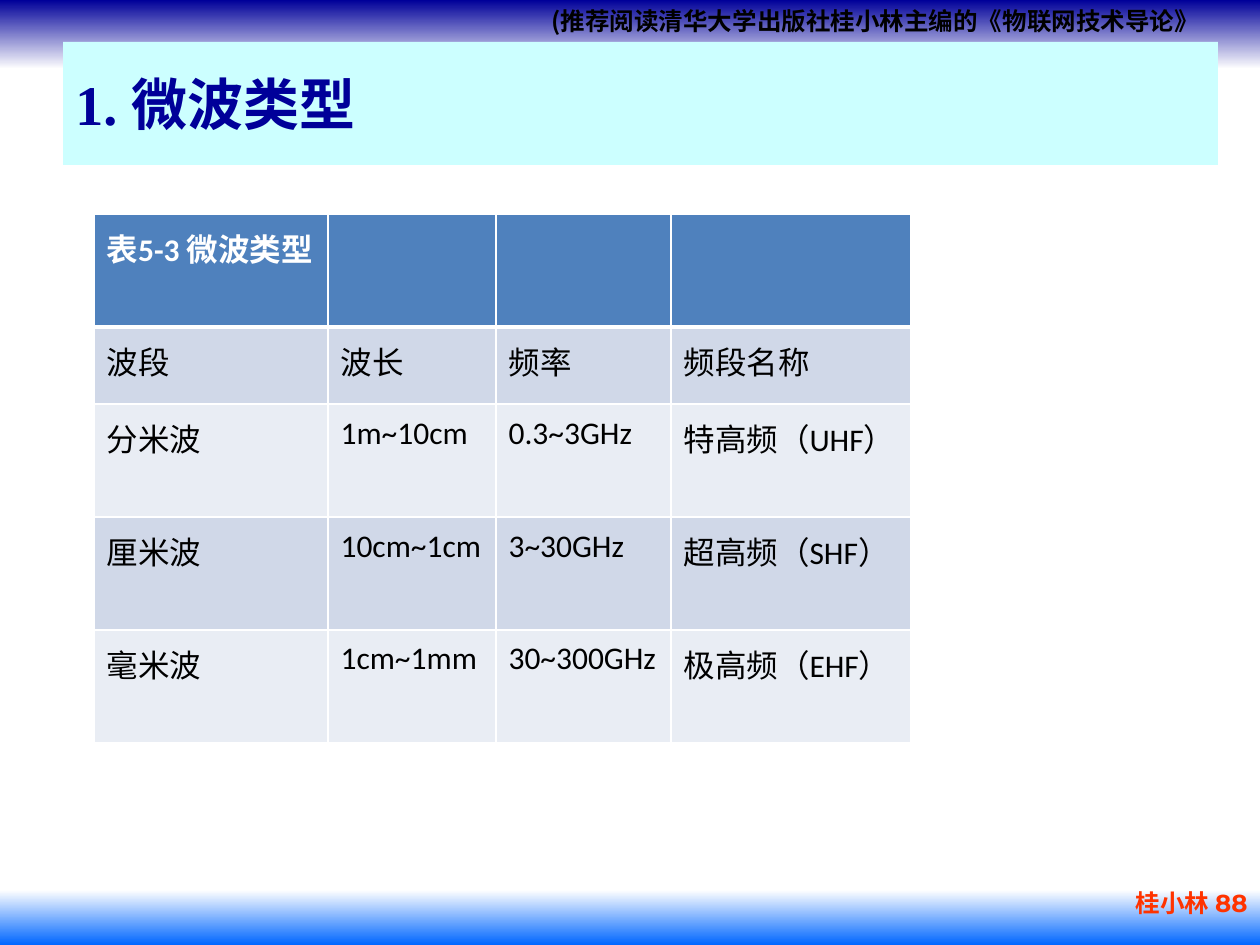
from lxml.etree import SubElement
from pptx import Presentation
from pptx.dml.color import RGBColor as RGB
from pptx.enum.shapes import MSO_SHAPE as Shape
from pptx.enum.text import MSO_ANCHOR as Anchor, PP_ALIGN as Align
from pptx.oxml.ns import qn
from pptx.util import Emu, Pt

SCALE = 914400 / 126
CJK = "Noto Sans CJK SC"
COLORS = {
    "navy": "000099", "blue": "0066FF", "white": "FFFFFF", "black": "000000",
    "red": "FF3300", "cyan": "CCFFFF", "head": "4F81BD",
    "dark": "D0D8E8", "light": "E9EDF4",
}
SHORT, TALL = 77, 113
ROWS = [
    (TALL, ["表5-3 微波类型", "", "", ""]),
    (SHORT, ["波段", "波长", "频率", "频段名称"]),
    (TALL, ["分米波", "1m~10cm", "0.3~3GHz", "特高频（UHF）"]),
    (TALL, ["厘米波", "10cm~1cm", "3~30GHz", "超高频（SHF）"]),
    (TALL, ["毫米波", "1cm~1mm", "30~300GHz", "极高频（EHF）"]),
]


def px(*sizes):
    return [Emu(round(size * SCALE)) for size in sizes]


def color(name):
    return RGB.from_string(COLORS[name])


class Deck:
    def __init__(self, width, height):
        self.prs = Presentation()
        self.prs.slide_width, self.prs.slide_height = px(width, height)
        self.slide = self.prs.slides.add_slide(self.prs.slide_layouts[6])

    def style(self, para, face, size, ink, bold):
        for font in [para.font] + [run.font for run in para.runs]:
            font.size, font.bold, font.name = Pt(size), bold, face
            font.color.rgb = color(ink)
        for run in para.runs:
            SubElement(run.font._element, qn("a:ea"), typeface=CJK)

    def band(self, box, top, bottom):
        bar = self.slide.shapes.add_shape(Shape.RECTANGLE, *px(*box))
        bar.shadow.inherit = False
        bar.line.fill.background()
        bar.fill.gradient()
        bar.fill.gradient_angle = 270
        for stop, place, name in zip(bar.fill.gradient_stops, (0, 1), (top, bottom)):
            stop.position = place
            stop.color.rgb = color(name)

    def text(self, box, words, face, size, ink, align=Align.LEFT,
             anchor=Anchor.TOP, fill=None):
        label = self.slide.shapes.add_textbox(*px(*box))
        if fill:
            label.fill.solid()
            label.fill.fore_color.rgb = color(fill)
        frame = label.text_frame
        frame.word_wrap, frame.vertical_anchor = True, anchor
        frame.text = words
        para = frame.paragraphs[0]
        para.alignment = align
        self.style(para, face, size, ink, True)

    def border(self, cell, row):
        props = cell._tc.get_or_add_tcPr()
        thick = {(0, "B"), (1, "T")}
        for side in "LRTB":
            width = Pt(3 if (row, side) in thick else 1)
            line = SubElement(props, qn("a:ln" + side), w=str(width))
            fill = SubElement(line, qn("a:solidFill"))
            SubElement(fill, qn("a:srgbClr"), val=COLORS["white"])

    def table(self, left, top, widths, rows):
        total = sum(height for height, row in rows)
        box = px(left, top, sum(widths), total)
        grid = self.slide.shapes.add_table(len(rows), len(widths), *box).table
        for col, width in zip(grid.columns, px(*widths)):
            col.width = width
        for r, (height, row) in enumerate(rows):
            grid.rows[r].height = px(height)[0]
            shade = "head" if r == 0 else ("light", "dark")[r % 2]
            ink = "white" if r == 0 else "black"
            for c, words in enumerate(row):
                cell = grid.cell(r, c)
                self.border(cell, r)
                cell.fill.solid()
                cell.fill.fore_color.rgb = color(shade)
                cell.text_frame.text = words
                para = cell.text_frame.paragraphs[0]
                para.line_spacing = 1.1
                self.style(para, "Calibri", 18, ink, r == 0)


def main():
    deck = Deck(1260, 945)
    deck.band((0, 0, 1260, 69), "navy", "white")
    deck.band((0, 890, 1260, 55), "white", "blue")
    deck.text((491, 0, 769, 42), "(推荐阅读清华大学出版社桂小林主编的《物联网技术导论》",
              CJK, 14, "black", Align.CENTER)
    deck.text((888, 882, 372, 63), "桂小林 88", "Montserrat", 14, "red", Align.RIGHT)
    deck.text((63, 42, 1155, 123), "1. 微波类型", "Times New Roman", 32, "navy",
              anchor=Anchor.MIDDLE, fill="cyan")
    deck.table(94, 214, (234, 168, 175, 240), ROWS)
    deck.prs.save("out.pptx")


if __name__ == "__main__":
    main()
